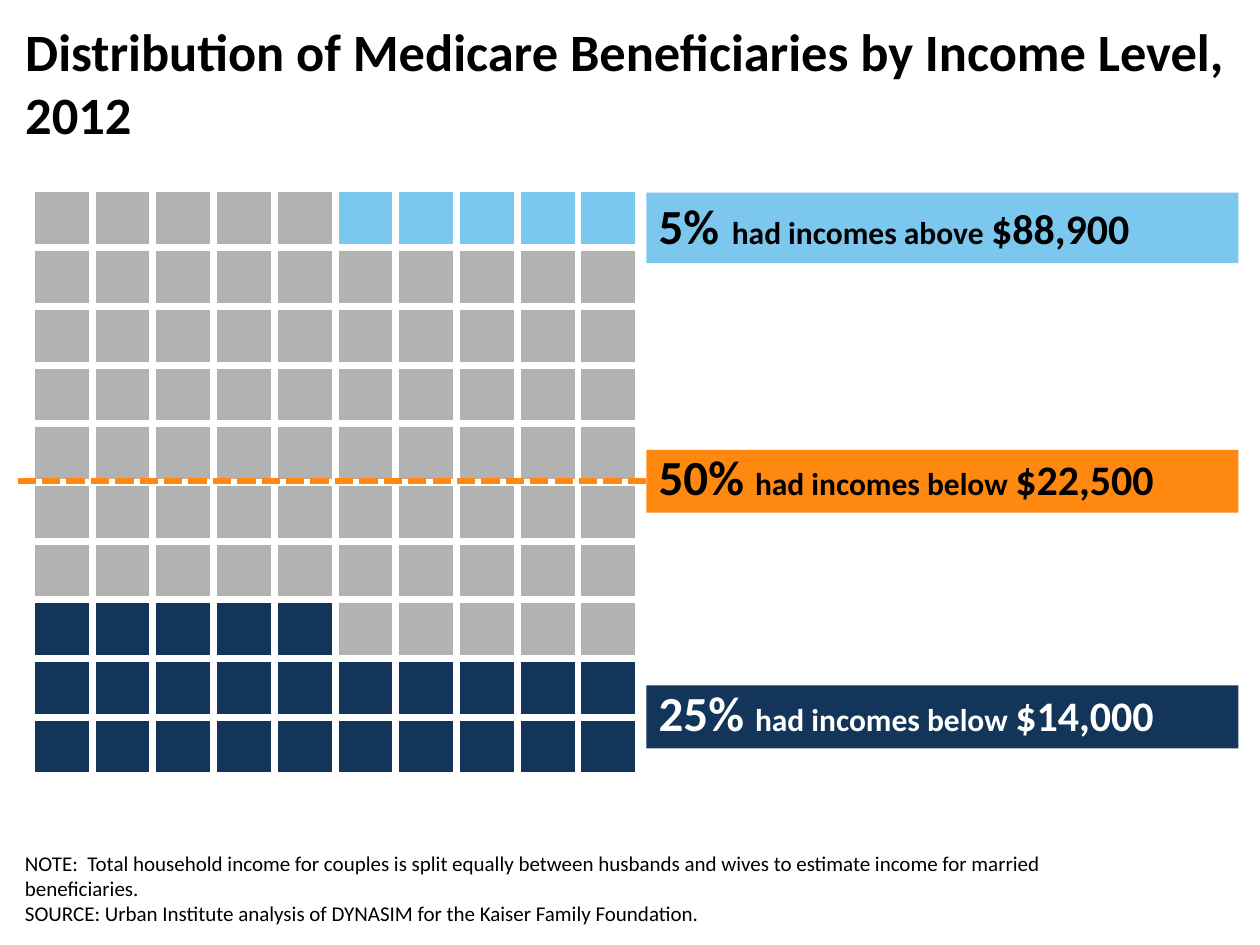
from lxml.etree import SubElement
from pptx import Presentation
from pptx.dml.color import RGBColor
from pptx.enum.dml import MSO_LINE
from pptx.enum.shapes import MSO_CONNECTOR, MSO_SHAPE
from pptx.enum.text import MSO_ANCHOR as Anchor, MSO_AUTO_SIZE as AutoSize, PP_ALIGN as Align
from pptx.oxml.ns import qn
from pptx.util import Inches, Pt

BLACK, WHITE, GREY = "000000", "FFFFFF", "B2B2B2"
LIGHT_BLUE, ORANGE, NAVY = "7BC7ED", "FF8811", "133559"


def rgb(value):
    return RGBColor.from_string(value)


def box(*lengths):
    return [Inches(length) for length in lengths]


class SlideBuilder:
    font_name = "Calibri"

    def __init__(self, slide):
        self.slide = slide

    def format_frame(self, frame, **values):
        settings = {"word_wrap": True, "auto_size": AutoSize.NONE, **values}
        for name, value in settings.items():
            setattr(frame, name, value)

    def add_runs(self, paragraph, runs, color=BLACK, bold=False, spacing=None):
        paragraph.alignment = Align.LEFT
        paragraph.line_spacing = spacing
        for text, size in runs:
            run = paragraph.add_run()
            run.text = text
            values = {"name": self.font_name, "size": Pt(size), "bold": bold}
            for name, value in values.items():
                setattr(run.font, name, value)
            run.font.color.rgb = rgb(color)

    def title(self, text, place, size):
        heading = self.slide.shapes.title
        heading.left, heading.top, heading.width, heading.height = box(*place)
        self.format_frame(heading.text_frame, vertical_anchor=Anchor.TOP)
        self.add_runs(heading.text_frame.paragraphs[0], [(text, size)], bold=True)

    def footnotes(self, lines, place, size):
        frame = self.slide.shapes.add_textbox(*box(*place)).text_frame
        self.format_frame(frame, vertical_anchor=Anchor.BOTTOM)
        for index, line in enumerate(lines):
            paragraph = frame.add_paragraph() if index else frame.paragraphs[0]
            self.add_runs(paragraph, [(line, size)])

    def banner(self, runs, place, fill, color):
        bar = self.slide.shapes.add_shape(MSO_SHAPE.RECTANGLE, *box(*place))
        bar.shadow.inherit = False
        bar.fill.solid()
        bar.fill.fore_color.rgb = rgb(fill)
        bar.line.fill.background()
        self.format_frame(bar.text_frame, vertical_anchor=Anchor.TOP,
                          auto_size=AutoSize.SHAPE_TO_FIT_TEXT)
        self.add_runs(bar.text_frame.paragraphs[0], runs, color, bold=True, spacing=0.85)

    def dashed_line(self, start, end, color, width):
        line = self.slide.shapes.add_connector(
            MSO_CONNECTOR.STRAIGHT, *box(*start, *end))
        line.line.color.rgb = rgb(color)
        line.line.width = Pt(width)
        line.line.dash_style = MSO_LINE.SQUARE_DOT
        SubElement(line._element.spPr, qn("a:effectLst"))

    def cell_borders(self, cell, color, width):
        properties = cell._tc.get_or_add_tcPr()
        for side in ("lnL", "lnR", "lnT", "lnB"):
            border = SubElement(properties, qn(f"a:{side}"), w=str(Pt(width)))
            fill = SubElement(border, qn("a:solidFill"))
            SubElement(fill, qn("a:srgbClr"), val=color)

    def square_grid(self, count, place, color_of):
        grid = self.slide.shapes.add_table(count, count, *box(*place)).table
        grid.first_row = grid.horz_banding = False
        for row in range(count):
            for column in range(count):
                cell = grid.cell(row, column)
                self.cell_borders(cell, WHITE, 4.5)
                cell.fill.solid()
                # Squares count upwards from the bottom left
                rank = (count - 1 - row) * count + column
                cell.fill.fore_color.rgb = rgb(color_of(rank))


def income_color(percentile):
    if percentile < 25:
        return NAVY
    return LIGHT_BLUE if percentile >= 95 else GREY


def main():
    deck = Presentation()
    deck.slide_width, deck.slide_height = box(10, 7.5)
    builder = SlideBuilder(deck.slides.add_slide(deck.slide_layouts[5]))

    builder.title("Distribution of Medicare Beneficiaries by Income Level, 2012",
                  (0.1, 0.1, 9.8, 1), 30)

    # One square for each percent of beneficiaries
    builder.square_grid(10, (0.25, 1.5, 4.82, 4.66), income_color)

    # Income thresholds
    banners = [
        (1.53, 0.56, LIGHT_BLUE, BLACK,
         [("5%", 28), (" ", 32), ("had incomes above ", 18), ("$88,900", 24)]),
        (3.57, 0.5, ORANGE, BLACK,
         [("50% ", 28), ("had incomes below ", 18), ("$22,500", 24)]),
        (5.44, 0.5, NAVY, WHITE,
         [("25% ", 28), ("had incomes below ", 18), ("$14,000", 24)]),
    ]
    for top, height, fill, color, runs in banners:
        builder.banner(runs, (5.13, top, 4.7, height), fill, color)

    # Median marker
    builder.dashed_line((0.14, 3.82), (5.22, 3.82), ORANGE, 3.5)

    # Note and source
    builder.footnotes([
        "NOTE:  Total household income for couples is split equally between "
        "husbands and wives to estimate income for married beneficiaries.",
        "SOURCE: Urban Institute analysis of DYNASIM for the Kaiser Family Foundation.",
    ], (0.1, 6.8, 9.1, 0.6), 12)

    deck.save("out.pptx")


if __name__ == "__main__":
    main()
